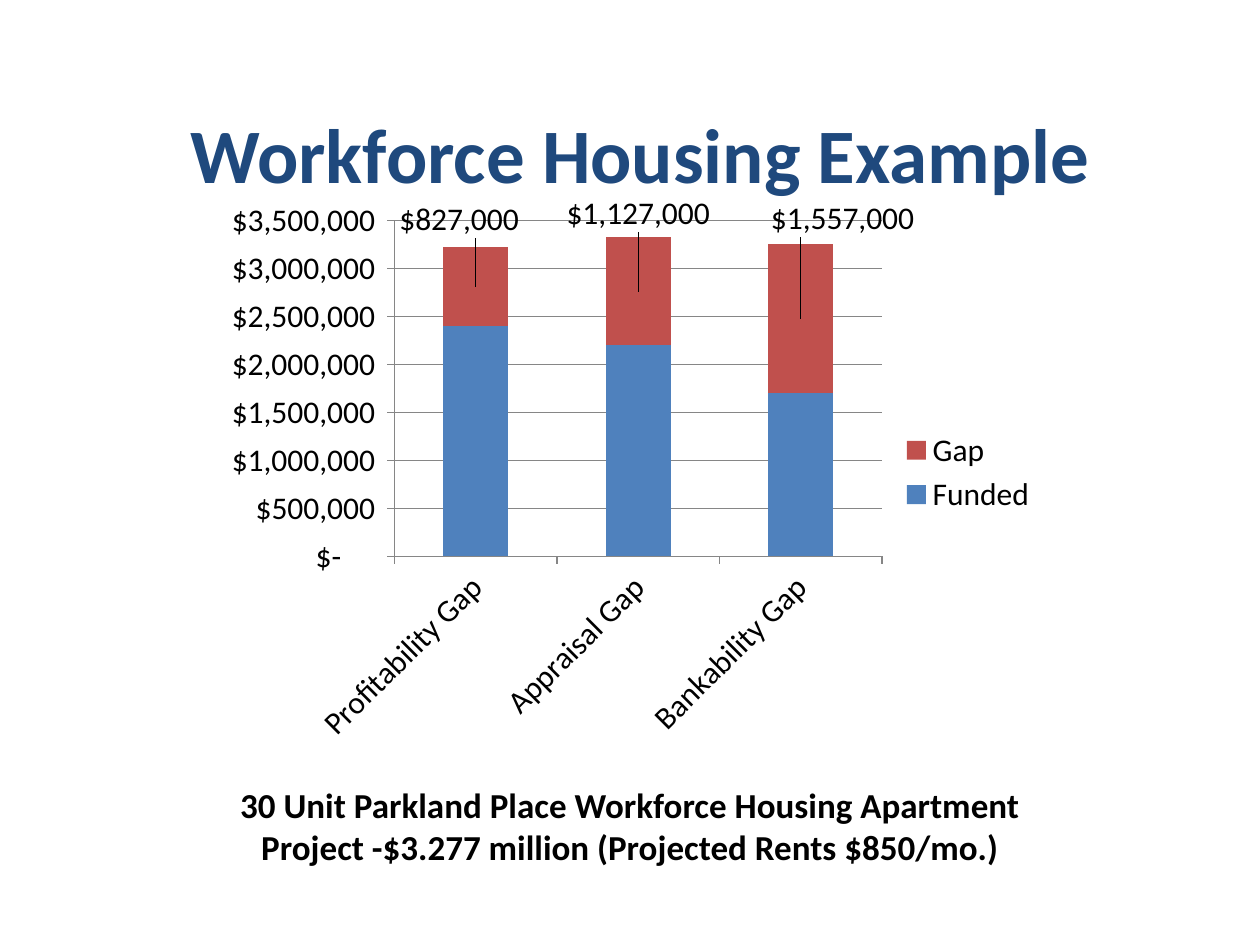
from lxml import etree
from pptx import Presentation
from pptx.chart.data import CategoryChartData
from pptx.dml.color import RGBColor
from pptx.enum.chart import XL_CHART_TYPE, XL_LABEL_POSITION, XL_LEGEND_POSITION, XL_TICK_MARK
from pptx.enum.text import MSO_ANCHOR, PP_ALIGN
from pptx.oxml import parse_xml
from pptx.oxml.ns import qn
from pptx.util import Inches, Pt

STACKED = XL_CHART_TYPE.COLUMN_STACKED
LABEL_CENTER = XL_LABEL_POSITION.CENTER
LEGEND_RIGHT = XL_LEGEND_POSITION.RIGHT
OUTSIDE = XL_TICK_MARK.OUTSIDE
MIDDLE = MSO_ANCHOR.MIDDLE
CENTER = PP_ALIGN.CENTER
NAVY = RGBColor(0x1F, 0x49, 0x7D)
BLACK = RGBColor(0, 0, 0)
GRAY = RGBColor(0x86, 0x86, 0x86)
BLUE = RGBColor(0x4F, 0x81, 0xBD)
RED = RGBColor(0xC0, 0x50, 0x4D)
FONT = "Calibri"
ACCOUNTING = '_("$"* #,##0_);_("$"* \\(#,##0\\);_("$"* "-"??_);_(@_)'
CHART_NS = "http://schemas.openxmlformats.org/drawingml/2006/chart"


def write_bold(shape, text, size, color):
    paragraph = shape.text_frame.paragraphs[0]
    paragraph.alignment = CENTER
    run = paragraph.add_run()
    run.text = text
    run.font.name = FONT
    run.font.size = Pt(size)
    run.font.bold = True
    run.font.color.rgb = color


def manual_layout(**settings):
    layout = etree.Element(qn("c:layout"))
    manual = etree.SubElement(layout, qn("c:manualLayout"))
    for name, value in settings.items():
        etree.SubElement(manual, qn("c:" + name)).set("val", str(value))
    return layout


presentation = Presentation()
presentation.slide_width = Inches(10)
presentation.slide_height = Inches(7.5)
width = presentation.slide_width
slide = presentation.slides.add_slide(presentation.slide_layouts[5])

# Title
title = slide.shapes.title
title.left, title.top = width // 12, Inches(0.41)
title.width, title.height = int(width * 0.85), Inches(1.61)
title.text_frame.vertical_anchor = MIDDLE
write_bold(title, "Workforce Housing Example", 44, NAVY)

# Project caption
caption = slide.shapes.add_textbox(int(width * 0.15), Inches(6.17), int(width * 0.7), Inches(0.83))
caption.text_frame.word_wrap = True
write_bold(caption, "30 Unit Parkland Place Workforce Housing Apartment "
           "Project -$3.277 million (Projected Rents $850/mo.)", 20, BLACK)

# Stacked chart: the funded part and the gap above it
funded = [2400000, 2200000, 1700000]
gaps = [827000, 1127000, 1557000]
chart_data = CategoryChartData(number_format=ACCOUNTING)
chart_data.categories = ["Profitability Gap", "Appraisal Gap", "Bankability Gap"]
chart_data.add_series("Funded", funded)
chart_data.add_series("Gap", gaps)
chart = slide.shapes.add_chart(STACKED, width // 6, Inches(1.53), width * 2 // 3,
                               Inches(4.44), chart_data).chart
chart.has_title = False
chart.font.name = FONT
chart.font.size = Pt(18)
chart.font.color.rgb = BLACK
chart.has_legend = True
chart.legend.position = LEGEND_RIGHT
chart.legend.include_in_layout = False

# Plot area and columns
plot = chart.plots[0]
plot.gap_width, plot.overlap = 150, 100
plot.vary_by_categories = False
for series, color in zip(plot.series, (BLUE, RED)):
    series.format.fill.solid()
    series.format.fill.fore_color.rgb = color
plot_area = chart.element.find(".//" + qn("c:plotArea"))
for old_layout in plot_area.findall(qn("c:layout")):
    plot_area.remove(old_layout)
plot_area.insert(0, manual_layout(layoutTarget="inner", xMode="edge", yMode="edge",
                                  x=0.22, y=0.05, w=0.58, h=0.6))

# Axes
value_axis, category_axis = chart.value_axis, chart.category_axis
value_axis.minimum_scale, value_axis.maximum_scale = 0, 3500000
value_axis.major_unit = 500000
value_axis.tick_labels.number_format = ACCOUNTING
value_axis.tick_labels.number_format_is_linked = False
value_axis.has_major_gridlines = True
value_axis.major_gridlines.format.line.color.rgb = GRAY
for axis in (value_axis, category_axis):
    axis.major_tick_mark = OUTSIDE
    axis.format.line.color.rgb = GRAY
    axis.tick_labels.font.size = Pt(18)
category_axis._element.find(".//" + qn("a:bodyPr")).set("rot", str(-45 * 60000))

# Gap labels, lifted above the columns with leader lines
gap_series = plot.series[1]
gap_series.data_labels.show_value = True
offsets = [(-0.02, -0.12), (0, -0.14), (0.05, -0.18)]
for index in range(len(gaps)):
    gap_series.points[index].data_label.position = LABEL_CENTER
label_list = gap_series._element.find(qn("c:dLbls"))
for label, (x, y) in zip(label_list.findall(qn("c:dLbl")), offsets):
    label.find(qn("c:idx")).addnext(manual_layout(x=x, y=y))
label_list.append(parse_xml(
    f'<c:extLst xmlns:c="{CHART_NS}"><c:ext uri="{{CE6537A1-D6FC-4f65-9D91-7224C49458BB}}" '
    'xmlns:c15="http://schemas.microsoft.com/office/drawing/2012/chart">'
    '<c15:showLeaderLines val="1"/></c:ext></c:extLst>'))

presentation.save("out.pptx")
